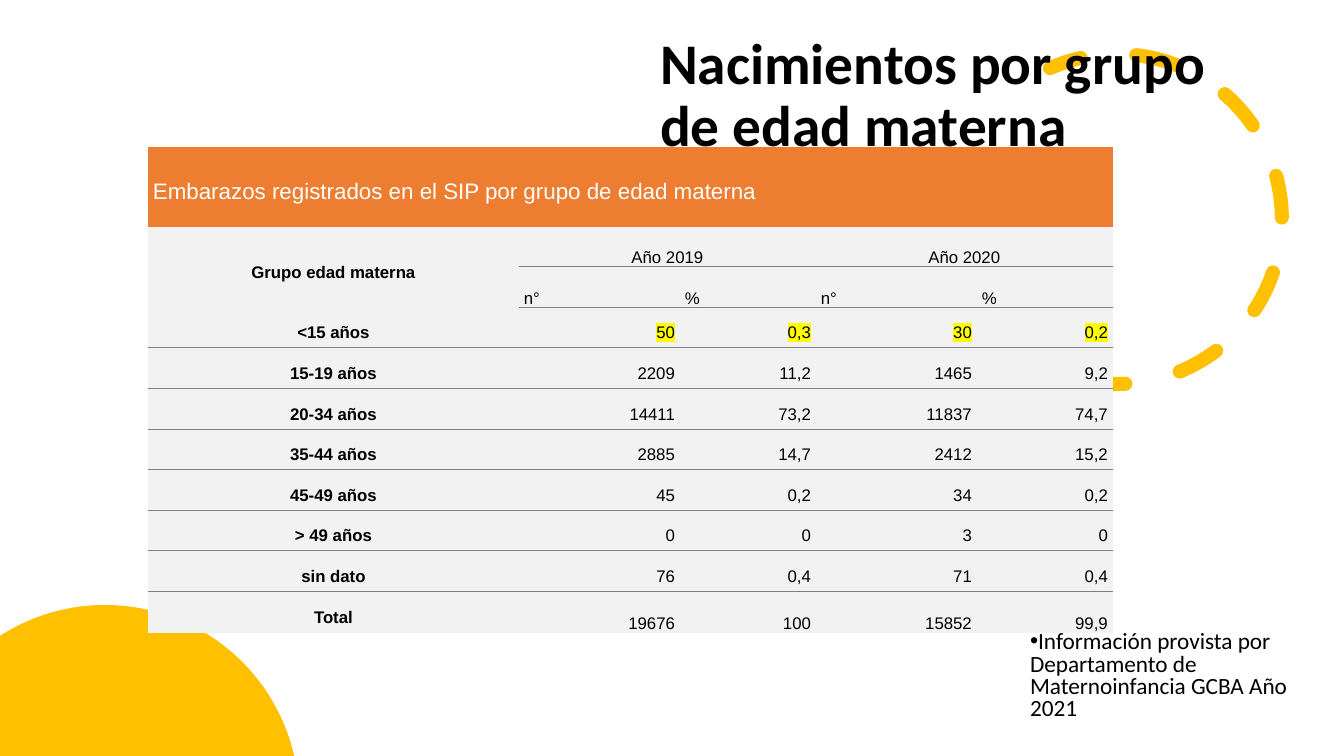
"""Build the slide on births by maternal age group."""
from math import acos, asin, cos, pi, sin

from lxml.etree import SubElement
from pptx import Presentation
from pptx.dml.color import RGBColor
from pptx.enum.dml import MSO_LINE
from pptx.enum.shapes import MSO_SHAPE as SHAPE
from pptx.enum.text import MSO_ANCHOR as ANCHOR, MSO_AUTO_SIZE as AUTO_SIZE, PP_ALIGN as ALIGN
from pptx.oxml import parse_xml
from pptx.oxml.ns import nsdecls, qn
from pptx.util import Inches, Pt

PX = Inches(1) / 100.8
BLACK = RGBColor(0, 0, 0)
WHITE = RGBColor(255, 255, 255)
AMBER = RGBColor(0xFF, 0xC0, 0x00)
ORANGE = RGBColor(0xED, 0x7D, 0x31)
PALE_GREY = RGBColor(0xF2, 0xF2, 0xF2)
RULE_GREY = RGBColor(0x7F, 0x7F, 0x7F)
YELLOW = RGBColor(0xFF, 0xFF, 0x00)


def px(*lengths):
    """Turn pixel lengths into EMU."""
    return [round(length * PX) for length in lengths]


def format_text(text_frame, font_name, size, color, bold=False, align=ALIGN.LEFT):
    """Format the only paragraph of a text frame."""
    paragraph = text_frame.paragraphs[0]
    paragraph.alignment = align
    for run in paragraph.runs:
        run.font.name = font_name
        run.font.size = Pt(size)
        run.font.bold = bold
        run.font.color.rgb = color
    return paragraph


presentation = Presentation()
presentation.slide_width, presentation.slide_height = px(1344, 756)
slide = presentation.slides.add_slide(presentation.slide_layouts[1])
title, body = slide.placeholders

title.left, title.top, title.width, title.height = px(650, 52, 602, 146)
title.text_frame.text = "Nacimientos por grupo de edad materna"
title.text_frame.auto_size = AUTO_SIZE.NONE
title.text_frame.vertical_anchor = ANCHOR.MIDDLE
title.text_frame.margin_bottom = px(62)[0]
paragraph = format_text(title.text_frame, "Calibri", 41, BLACK, bold=True)
paragraph.line_spacing = 0.9

dashed_arc = slide.shapes.add_shape(SHAPE.ARC, *px(952, 54, 330, 330))
dashed_arc.shadow.inherit = False
dashed_arc.adjustments[0] = 144.42 * 0.6
dashed_arc.adjustments[1] = 0
dashed_arc.rotation = 66.1
dashed_arc.element.spPr.find(qn("a:xfrm")).set("flipH", "1")
dashed_arc.fill.background()
dashed_arc.line.color.rgb = AMBER
dashed_arc.line.width = Pt(10)
dashed_arc.line.dash_style = MSO_LINE.DASH
dashed_arc.element.spPr.find(qn("a:ln")).set("cap", "rnd")
title.element.addprevious(dashed_arc.element)

center_x, center_y, radius = 105, 799, 194
start = pi - acos(center_x / radius)
end = asin((center_y - 756) / radius)
steps = 80
angles = [start + (end - start) * step / steps for step in range(steps + 1)]
rim = [px(center_x + radius * cos(a), center_y - radius * sin(a)) for a in angles]
builder = slide.shapes.build_freeform(*px(0, 756))
builder.add_line_segments(rim, close=True)
corner_circle = builder.convert_to_shape()
corner_circle.shadow.inherit = False
corner_circle.fill.solid()
corner_circle.fill.fore_color.rgb = AMBER
corner_circle.line.fill.background()
body.element.addprevious(corner_circle.element)

body.left, body.top, body.width, body.height = px(1020, 627, 313, 107)
body.text_frame.text = "Información provista por Departamento de Maternoinfancia GCBA Año 2021"
body.text_frame.auto_size = AUTO_SIZE.NONE
paragraph = format_text(body.text_frame, "Calibri", 16.6, BLACK)
paragraph.line_spacing = 0.8
paragraph.space_before = Pt(0)
properties = paragraph._p.get_or_add_pPr()
properties.set("marL", "0")
properties.set("indent", "0")
SubElement(properties, qn("a:buChar")).set("char", "•")

rows = [
    ["Embarazos registrados en el SIP por grupo de edad materna", "", "", "", ""],
    ["Grupo edad materna", "Año 2019", "", "Año 2020", ""],
    ["", "n°", "%", "n°", "%"],
    ["<15 años", "50", "0,3", "30", "0,2"],
    ["15-19 años", "2209", "11,2", "1465", "9,2"],
    ["20-34 años", "14411", "73,2", "11837", "74,7"],
    ["35-44 años", "2885", "14,7", "2412", "15,2"],
    ["45-49 años", "45", "0,2", "34", "0,2"],
    ["> 49 años", "0", "0", "3", "0"],
    ["sin dato", "76", "0,4", "71", "0,4"],
    ["Total", "19676", "100", "15852", "99,9"],
]
last_row = len(rows) - 1
column_widths = [371, 161, 136, 161, 136]
row_edges = [147] + [227 + i * 406 // 10 for i in range(len(rows))]
table_frame = slide.shapes.add_table(len(rows), 5, *px(148, 147, 965, 486))
table_frame.element.xpath(".//a:tableStyleId")[0].text = "{2D5ABB26-0587-4C30-8999-92F81FD0307C}"
table = table_frame.table
table.first_row = table.horz_banding = False
for column, width in zip(table.columns, column_widths):
    column.width = px(width)[0]
for row, top, bottom in zip(table.rows, row_edges, row_edges[1:]):
    row.height = px(bottom - top)[0]
for first, last in [((0, 0), (0, 4)), ((1, 0), (2, 0)), ((1, 1), (1, 2)), ((1, 3), (1, 4))]:
    table.cell(*first).merge(table.cell(*last))

for r, values in enumerate(rows):
    for c, value in enumerate(values):
        cell = table.cell(r, c)
        cell.text_frame.text = value
        cell.margin_left, cell.margin_top, cell.margin_right, cell.margin_bottom = px(5, 10, 5, 0)
        bottom_anchored = c > 0 and r in (1, 2, last_row)
        cell.vertical_anchor = ANCHOR.BOTTOM if bottom_anchored else ANCHOR.MIDDLE
        cell.fill.solid()
        cell.fill.fore_color.rgb = PALE_GREY if r else ORANGE
        if r == 0:
            format_text(cell.text_frame, "Arial", 16, WHITE)
        else:
            align = ALIGN.CENTER if c == 0 or r == 1 else ALIGN.LEFT if r == 2 else ALIGN.RIGHT
            format_text(cell.text_frame, "Arial", 12, BLACK, bold=c == 0, align=align)
        if r == 3 and c > 0:
            run = cell.text_frame.paragraphs[0].runs[0]
            run.font._element.find(qn("a:solidFill")).addnext(parse_xml(
                f'<a:highlight {nsdecls("a")}><a:srgbClr val="{YELLOW}"/></a:highlight>'))
        if 3 <= r < last_row or (r in (1, 2) and c > 0):
            cell._tc.get_or_add_tcPr().insert(0, parse_xml(
                f'<a:lnB {nsdecls("a")} w="{Pt(0.75)}"><a:solidFill>'
                f'<a:srgbClr val="{RULE_GREY}"/></a:solidFill></a:lnB>'))

presentation.save("out.pptx")
